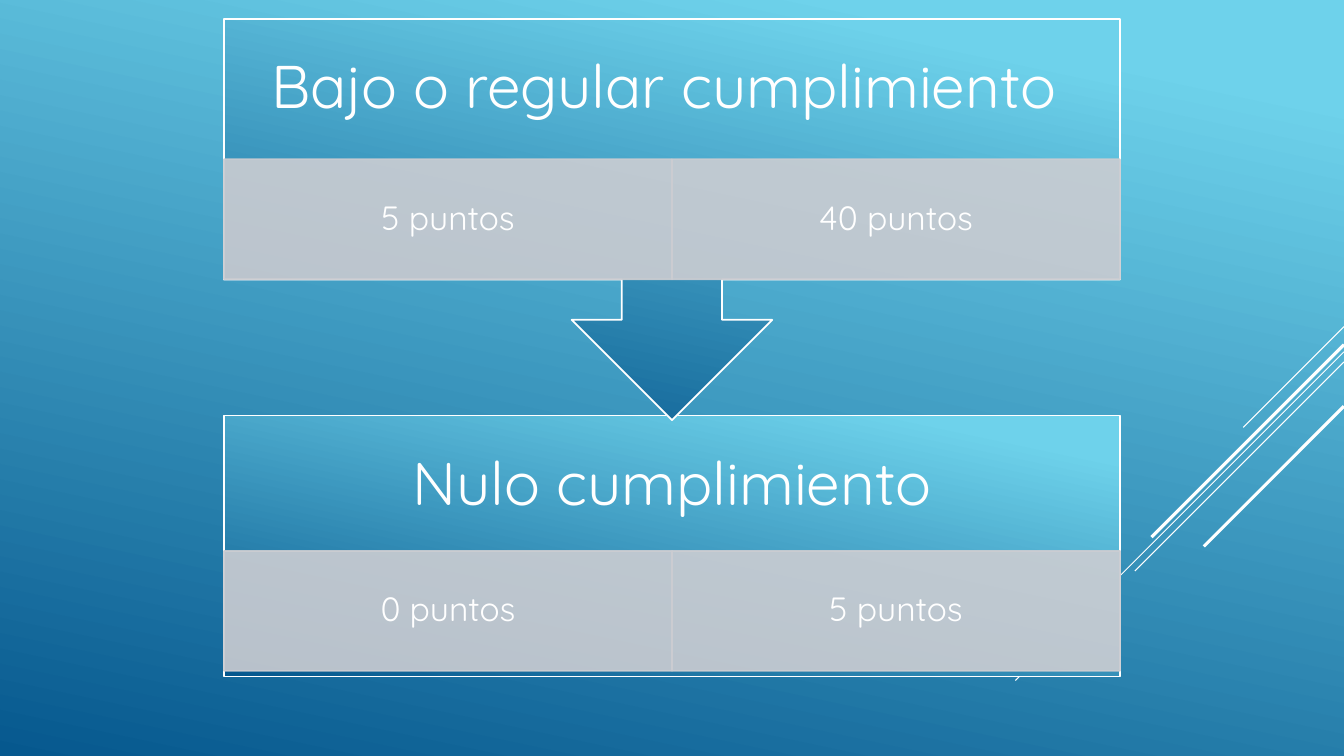
from lxml.etree import SubElement
from pptx import Presentation
from pptx.dml.color import RGBColor
from pptx.enum.shapes import MSO_CONNECTOR, MSO_SHAPE
from pptx.enum.text import MSO_ANCHOR, PP_ALIGN
from pptx.oxml.ns import qn
from pptx.util import Pt


def rgb(value):
    return RGBColor.from_string(value)


def write(sp, text, size, color, font, inset_x, inset_y):
    tf = sp.text_frame
    tf.word_wrap = True
    tf.vertical_anchor = MSO_ANCHOR.MIDDLE
    tf.margin_left = tf.margin_right = Pt(inset_x)
    tf.margin_top = tf.margin_bottom = Pt(inset_y)
    p = tf.paragraphs[0]
    p.alignment = PP_ALIGN.CENTER
    p.line_spacing = 0.9
    r = p.add_run()
    r.text = text
    r.font.size = Pt(size)
    r.font.name = font
    r.font.color.rgb = rgb(color)


class Deck:
    font = "Quicksand"
    white = "FFFFFF"
    grey = "CCCDD2"
    light = "6ED2EB"
    dark = "06588E"
    outline = 1.25

    def __init__(self, prs):
        self.s = prs.slides.add_slide(prs.slide_layouts[6])

    def gradient(self, fill):
        fill.gradient()
        fill.gradient_angle = 258
        stops = zip(fill.gradient_stops, (self.light, self.dark), (0.1, 1))
        for stop, color, position in stops:
            stop.color.rgb = rgb(color)
            stop.position = position

    def background(self):
        self.gradient(self.s.background.fill)

    def ray(self, x, y, length, width):
        cn = self.s.shapes.add_connector(
            MSO_CONNECTOR.STRAIGHT, Pt(x), Pt(y), Pt(x - length), Pt(y + length))
        cn.line.color.rgb = rgb(self.white)
        cn.line.width = Pt(width)
        SubElement(cn._element.spPr, qn("a:effectLst"))

    def shape(self, kind, x, y, w, h, line):
        sp = self.s.shapes.add_shape(kind, Pt(x), Pt(y), Pt(w), Pt(h))
        sp.shadow.inherit = False
        sp.line.color.rgb = rgb(line)
        sp.line.width = Pt(self.outline)
        return sp

    def panel(self, kind, x, y, w, h):
        self.gradient(self.shape(kind, x, y, w, h, self.white).fill)

    def heading(self, text, x, y, w, h):
        sp = self.s.shapes.add_textbox(Pt(x), Pt(y), Pt(w), Pt(h))
        write(sp, text, 43, self.white, self.font, 24, 24)

    def cell(self, text, x, y, w, h):
        sp = self.shape(MSO_SHAPE.RECTANGLE, x, y, w, h, self.grey)
        sp.fill.solid()
        sp.fill.fore_color.rgb = rgb(self.grey)
        for color in sp._element.spPr.iter(qn("a:srgbClr")):
            SubElement(color, qn("a:alpha"), val="90000")
        write(sp, text, 24, self.white, self.font, 13.7, 2.2)


def main():
    prs = Presentation()
    prs.slide_width, prs.slide_height = Pt(960), Pt(540)
    deck = Deck(prs)
    deck.background()

    rays = [(233.3, 72, 0.75), (251.3, 234.7, 0.75), (258.5, 149.4, 0.75),
            (246.2, 137.5, 2.25), (290.2, 100.1, 2.25)]
    for y, length, width in rays:
        deck.ray(960, y, length, width)

    left, width, cell_h = 160, 640, 85.7
    levels = [
        (MSO_SHAPE.RECTANGLE, 296.8, 186.5, 393.5,
         "Nulo cumplimiento", ["0 puntos", "5 puntos"]),
        (MSO_SHAPE.DOWN_ARROW_CALLOUT, 13.5, 286.6, 113.8,
         "Bajo o regular cumplimiento ", ["5 puntos", "40 puntos"]),
    ]
    for kind, top, height, cell_top, title, scores in levels:
        deck.panel(kind, left, top, width, height)
        deck.heading(title, left, top, width, 100.8)
        cell_w = width / len(scores)
        for i, score in enumerate(scores):
            deck.cell(score, left + i * cell_w, cell_top, cell_w, cell_h)

    prs.save("out.pptx")


if __name__ == "__main__":
    main()
